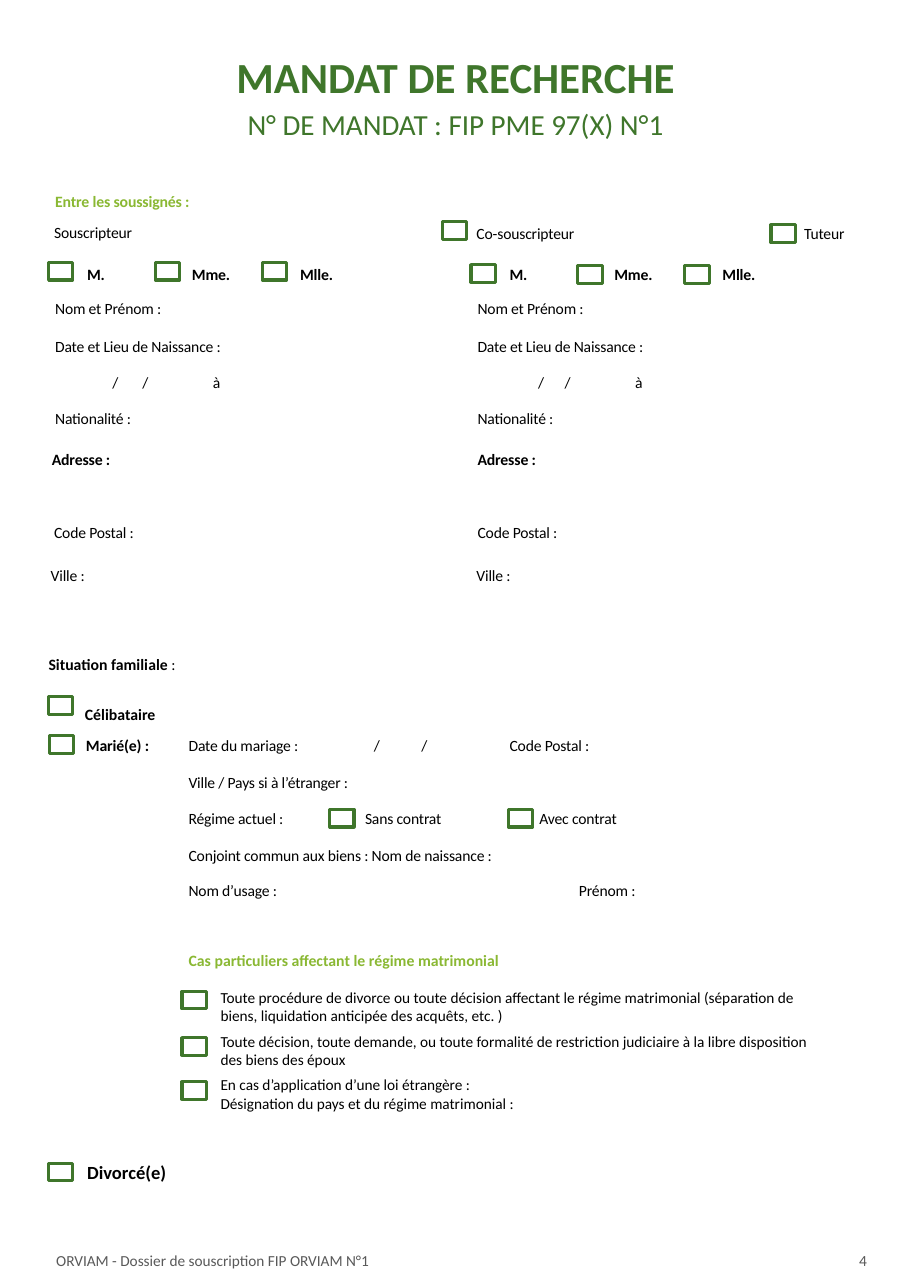
from collections import namedtuple
from pptx import Presentation, util as u
from pptx.dml.color import RGBColor
from pptx.enum import shapes, text
from pptx.oxml import parse_xml
from pptx.oxml.ns import nsdecls

COLORS = {"green": "3F762B", "lime": "8AB833", "ink": "000000", "grey": "595959"}
WIDTH, HEIGHT = 8.26, 11.68
LABEL_HEIGHT = 0.38
CHECK_WIDTH, CHECK_HEIGHT = 0.22, 0.16

Area = namedtuple("Area", "left top width height")
Style = namedtuple("Style", "size color bold spacing leading")

TITLE = Style(28, "green", True, 0, 27.6)
SUBTITLE = Style(19, "green", False, 0, 21.9)
INTRO = Style(10.3, "lime", True, -0.1, 13.8)
SECTION = INTRO._replace(spacing=0)
PLAIN = Style(10.2, "ink", False, -0.1, 13.8)
BOLD = Style(10.3, "ink", True, -0.1, 13.8)
STATUS = Style(12.1, "ink", True, 0, 13.8)
CASE = Style(10, "ink", False, 0, 12)
LAW = CASE._replace(leading=11.5)
FOOTER = Style(10, "grey", False, 0, 11.5)


def add_span(para, words, style):
    """Add one run of text in the given style."""
    span = para.add_run()
    span.text = words
    span.font.name = "Calibri"
    span.font.size = u.Pt(style.size)
    span.font.bold = style.bold
    span.font.color.rgb = RGBColor.from_string(COLORS[style.color])
    if style.spacing:
        span.font._element.set("spc", str(round(style.spacing * 100)))


def add_label(page, area, left, top, width, words, style=PLAIN, height=LABEL_HEIGHT,
              align=text.PP_ALIGN.LEFT):
    """Add a label at an offset inside an area and return its paragraph."""
    box = page.shapes.add_textbox(u.Inches(area.left + left), u.Inches(area.top + top),
                                  u.Inches(width), u.Inches(height))
    frame = box.text_frame
    frame.margin_left = frame.margin_right = frame.margin_top = frame.margin_bottom = 0
    frame.word_wrap = False
    frame.auto_size = text.MSO_AUTO_SIZE.SHAPE_TO_FIT_TEXT
    para = frame.paragraphs[0]
    para.alignment = align
    para.line_spacing = u.Pt(style.leading)
    for number, line in enumerate(words.split("\n") if words else []):
        if number:
            para.add_line_break()
        add_span(para, line, style)
    return para


def add_checkbox(page, area, left, top):
    """Add an empty tick box at an offset inside an area."""
    box = page.shapes.add_shape(shapes.MSO_SHAPE.RECTANGLE, u.Inches(area.left + left),
                                u.Inches(area.top + top), u.Inches(CHECK_WIDTH),
                                u.Inches(CHECK_HEIGHT))
    box.shadow.inherit = False
    box.fill.background()
    box.line.color.rgb = RGBColor.from_string(COLORS["green"])
    box.line.width = u.Pt(2)


def add_heading(page, area):
    """Add the centred title and mandate number."""
    rows = [("MANDAT DE RECHERCHE", TITLE, 0, 4.57, 0.4),
            ("N° DE MANDAT : FIP PME 97(X) N°1", SUBTITLE, 0.44, 4.28, 0.31)]
    for words, style, top, width, height in rows:
        add_label(page, area, (area.width - width) / 2, top, width, words, style,
                  height, text.PP_ALIGN.CENTER)


def add_roles(page, area):
    """Add the opening line and the roles of the signatories."""
    add_label(page, area, 0.01, 0, 1.28, "Entre les soussignés :", INTRO, 0.19)
    for words, left, top, width in [("Souscripteur", 0, 0.28, 0.75),
                                    ("Co-souscripteur", 3.83, 0.29, 0.95),
                                    ("Tuteur", 6.8, 0.29, 0.39)]:
        add_label(page, area, left, top, width, words, height=0.19)
    add_checkbox(page, area, 3.52, 0.29)
    add_checkbox(page, area, 6.5, 0.32)


def add_person(page, area, nudges, slashes, check_tops):
    """Add the identity fields of one signatory."""
    civilities = [("M.", 0.29, 0.17), ("Mme.", 1.24, 0.36), ("Mlle.", 2.22, 0.31)]
    for column, (words, left, width) in enumerate(civilities):
        add_label(page, area, left, 0, width, words, BOLD)
        add_checkbox(page, area, -0.06 + 0.97 * column, check_tops[column])
    fields = [("Nom et Prénom :", 0.31, 1.06, PLAIN),
              ("Date et Lieu de Naissance :", 0.65, 1.72, PLAIN),
              ("Nationalité :", 1.31, 0.75, PLAIN),
              ("Adresse :", 1.68, 0.56, BOLD),
              ("Code Postal :", 2.34, 0.81, PLAIN),
              ("Ville :", 2.73, 0.36, PLAIN)]
    for (words, top, width, style), nudge in zip(fields, nudges):
        add_label(page, area, nudge, top, width, words, style)
    for left in slashes:
        add_label(page, area, left, 0.98, 0.04, "/")
    add_label(page, area, 1.43, 0.98, 0.07, "à")


def add_family(page, area):
    """Add the family situation with the marriage details."""
    para = add_label(page, area, 0, 0, 1.23, "", BOLD._replace(leading=33), 1.32)
    para._p.get_or_add_pPr().append(parse_xml(
        f'<a:tabLst {nsdecls("a")}><a:tab pos="{u.Inches(0.33)}" algn="l"/></a:tabLst>'))
    heading = BOLD._replace(spacing=0)
    add_span(para, "Situation famili", heading)
    add_span(para, "ale ", heading._replace(size=10.2))
    add_span(para, ":", PLAIN._replace(spacing=0))
    para.add_line_break()
    add_span(para, "\tCélibataire", heading)
    add_label(page, area, 0.34, 1, 0.6, "Marié(e) :", BOLD)
    details = [("Date du mariage :", 1.27, 1, 1.12),
               ("/", 2.95, 1, 0.04),
               ("/", 3.38, 1, 0.04),
               ("Code Postal :", 4.18, 1, 0.81),
               ("Ville / Pays si à l’étranger :", 1.27, 1.34, 1.6),
               ("Régime actuel :", 1.27, 1.66, 0.97),
               ("Sans contrat", 2.87, 1.66, 0.73),
               ("Avec contrat", 4.45, 1.66, 0.79),
               ("Conjoint commun aux biens : Nom de naissance :", 1.27, 2, 3.1),
               ("Nom d’usage :", 1.27, 2.32, 0.9),
               ("Prénom :", 4.81, 2.32, 0.56)]
    for words, left, top, width in details:
        add_label(page, area, left, top, width, words)
    for left, top in [(0, 0.67), (0.01, 1.02), (2.55, 1.69), (4.17, 1.69)]:
        add_checkbox(page, area, left, top)


def add_special_cases(page, area):
    """Add the special cases of the matrimonial regime."""
    add_label(page, area, 0.06, 0, 3.01,
              "Cas particuliers affectant le régime matrimonial", SECTION, 0.19)
    cases = [("Toute procédure de divorce ou toute décision affectant le régime matrimonial "
              "(séparation de\nbiens, liquidation anticipée des acquêts, etc. )",
              0.36, 5.54, 0.5, CASE),
             ("Toute décision, toute demande, ou toute formalité de restriction judiciaire "
              "à la libre disposition\ndes biens des époux", 0.76, 5.69, 0.5, CASE),
             ("En cas d’application d’une loi étrangère :", 1.16, 2.46, 0.34, LAW),
             ("Désignation du pays et du régime matrimonial :", 1.33, 2.86, 0.34, LAW)]
    for words, top, width, height, style in cases:
        add_label(page, area, 0.35, top, width, words, style, height)
    for top in (0.39, 0.81, 1.21):
        add_checkbox(page, area, 0, top)


def add_divorced(page, area):
    """Add the divorced status line."""
    add_label(page, area, 0.35, 0, 0.78, "Divorcé(e)", STATUS)
    add_checkbox(page, area, 0, 0.01)


def add_footer(page, area):
    """Add the document name and the page number."""
    add_label(page, area, 0, 0, 2.95,
              "ORVIAM - Dossier de souscription FIP ORVIAM N°1", FOOTER, area.height)
    add_label(page, area, area.width - 0.08, 0, 0.08, "4",
              FOOTER._replace(size=10.1), area.height)


def main():
    """Build the mandate form."""
    deck = Presentation()
    deck.slide_width, deck.slide_height = u.Inches(WIDTH), u.Inches(HEIGHT)
    page = deck.slides.add_slide(deck.slide_layouts[6])
    add_heading(page, Area(0, 0.54, WIDTH, 0.75))
    add_roles(page, Area(0.49, 1.72, 7.19, 0.48))
    add_person(page, Area(0.5, 2.38, 3.4, 3.11), (0, 0, 0, -0.03, -0.01, -0.04),
               (0.52, 0.79), (0, 0, 0))
    add_person(page, Area(4.33, 2.38, 3.4, 3.11), (0, 0, 0, 0, 0, -0.01),
               (0.55, 0.79), (0.02, 0.03, 0.03))
    add_family(page, Area(0.44, 5.65, 5.6, 2.7))
    add_special_cases(page, Area(1.65, 8.6, 6.04, 1.67))
    add_divorced(page, Area(0.44, 10.54, 1.13, 0.38))
    add_footer(page, Area(0.51, 11.35, 7.36, 0.17))
    deck.save("out.pptx")


if __name__ == "__main__":
    main()
